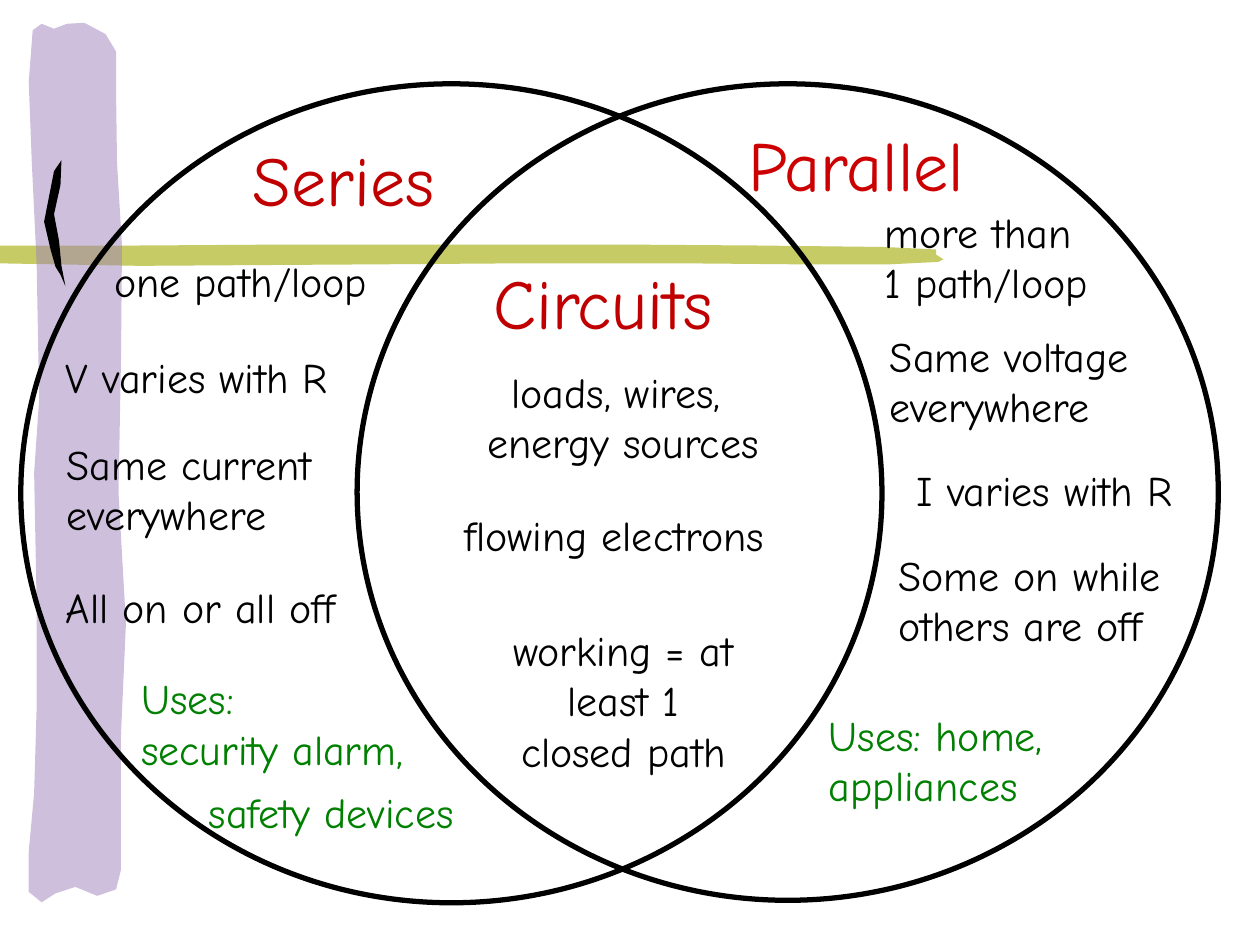
import pptx
import pptx.dml.color
import pptx.enum.shapes
import pptx.enum.text
import pptx.oxml
import pptx.util
from lxml import etree

Cm = pptx.util.Cm
FONT = "Comic Neue"
RED, BRIGHT_RED, BLACK, GREEN = "C00000", "CC0000", "000000", "008000"
TITLE, BODY = 40, 24

# Outlines: colour, opacity in percent, corner points in cm
BAND = ("C6CB65", 100, [
    (15.27, 4.95), (17.83, 4.98), (18.87, 5.03), (18.87, 5.13), (19.02, 5.23),
    (18.92, 5.28), (17.93, 5.33), (16.13, 5.33), (13.74, 5.31), (10.52, 5.31),
    (7.57, 5.33), (2.82, 5.36), (-0.05, 5.31), (-0.08, 4.95), (2.82, 4.95),
    (5.89, 4.93), (9.93, 4.93), (12.42, 4.93)])
BAR = ("9F83BD", 50, [
    (0.74, 14.25), (0.74, 12.22), (0.69, 9.53), (0.79, 8.05), (0.74, 5.33),
    (0.64, 3.23), (0.58, 1.65), (0.66, 0.61), (0.84, 0.48), (1.09, 0.58),
    (1.35, 0.48), (1.7, 0.46), (2.13, 0.69), (2.34, 1.04), (2.34, 1.8),
    (2.36, 3.28), (2.46, 4.95), (2.44, 7.26), (2.39, 9.93), (2.54, 12.57),
    (2.44, 14.81), (2.44, 17.53), (2.34, 17.93), (1.96, 18.06), (1.52, 17.88),
    (1.12, 18.01), (0.84, 18.19), (0.58, 17.98), (0.58, 17.17), (0.69, 15.98)])
CHEVRON = (BLACK, 100, [
    (1.24, 3.23), (1.22, 3.73), (1.09, 4.32), (1.19, 4.85), (1.24, 5.36),
    (1.32, 5.77), (1.22, 5.54), (1.12, 5.38), (1.02, 5.03), (0.89, 4.47),
    (0.99, 3.96), (1.09, 3.45)])

# Circles: left, top, width, height in cm
CIRCLES = [(0.42, 1.69, 17.36, 16.51), (7.2, 1.69, 17.36, 16.46)]

# Labels: text, left, top, width in cm, size, colour ("\v" is a line break)
SERIES = [
    ("Series", 4.85, 2.62, 4.85, TITLE, RED),
    ("one path/loop", 2.05, 5.03, 5.94, BODY, BLACK),
    ("V varies with R", 1.08, 6.96, 6.48, BODY, BLACK),
    ("Same current\veverywhere", 1.09, 8.71, 5.94, BODY, BLACK),
    ("All on or all off", 1.08, 11.59, 6.6, BODY, BLACK),
    ("Uses: \vsecurity alarm,", 2.6, 13.44, 6.45, BODY, GREEN),
    ("safety devices", 3.96, 15.72, 6.32, BODY, GREEN),
]
PARALLEL = [
    ("Parallel", 14.83, 2.33, 5.36, TITLE, BRIGHT_RED),
    ("more than \v1 path/loop", 17.58, 4.04, 4.98, BODY, BLACK),
    ("Same voltage\veverywhere", 17.69, 6.53, 5.74, BODY, BLACK),
    ("I varies with R", 18.23, 9.23, 6.38, BODY, BLACK),
    ("Some on while\vothers are off", 17.86, 10.95, 6.3, BODY, BLACK),
    ("Uses: home, \vappliances", 16.46, 14.17, 5.51, BODY, GREEN),
]
SHARED = [
    ("Circuits", 9.7, 5.11, 5.69, TITLE, RED),
    ("flowing electrons", 9.12, 10.15, 7.34, BODY, BLACK),
]
PARTS = ("loads, wires, \venergy sources", 9.31, 7.26, 6.5, BODY, BLACK)
WRAPPED = ("working = at least 1\vclosed path", 9.44, 12.46, 6.25, BODY, BLACK)


def color(code):
    return pptx.dml.color.RGBColor.from_string(code)


def add_outline(page, code, opacity, points):
    start, *others = [(Cm(x), Cm(y)) for x, y in points]
    builder = page.shapes.build_freeform(*start)
    builder.add_line_segments(others, close=True)
    shape = builder.convert_to_shape()
    shape.shadow.inherit = False
    shape.fill.solid()
    shape.fill.fore_color.rgb = color(code)
    shape.line.fill.background()
    if opacity < 100:
        fill = shape.fill._xPr.find(".//" + pptx.oxml.ns.qn("a:srgbClr"))
        alpha = etree.SubElement(fill, pptx.oxml.ns.qn("a:alpha"))
        alpha.set("val", str(opacity * 1000))


def add_circle(page, *place):
    circle = page.shapes.add_shape(
        pptx.enum.shapes.MSO_SHAPE.OVAL, *map(Cm, place))
    circle.shadow.inherit = False
    circle.fill.background()
    circle.line.color.rgb = color(BLACK)
    circle.line.width = pptx.util.Pt(3)


def add_label(page, text, left, top, width, size, code,
              centered=False, wrap=False):
    lines = text.count("\v") + (2 if wrap else 1)
    height = 0.25 + lines * size * 0.0427
    box = page.shapes.add_textbox(Cm(left), Cm(top), Cm(width), Cm(height))
    frame = box.text_frame
    frame.text = text
    frame.word_wrap = wrap
    frame.auto_size = pptx.enum.text.MSO_AUTO_SIZE.SHAPE_TO_FIT_TEXT
    paragraph = frame.paragraphs[0]
    if centered:
        paragraph.alignment = pptx.enum.text.PP_ALIGN.CENTER
    for span in paragraph.runs:
        span.font.name = FONT
        span.font.size = pptx.util.Pt(size)
        span.font.color.rgb = color(code)


def main():
    deck = pptx.Presentation()
    deck.slide_width, deck.slide_height = Cm(25.4), Cm(19.05)
    page = deck.slides.add_slide(deck.slide_layouts[6])
    for outline in (BAND, BAR, CHEVRON):
        add_outline(page, *outline)
    for circle in CIRCLES:
        add_circle(page, *circle)
    for label in SERIES + PARALLEL + SHARED:
        add_label(page, *label)
    add_label(page, *PARTS, centered=True)
    add_label(page, *WRAPPED, centered=True, wrap=True)
    deck.save("out.pptx")


if __name__ == "__main__":
    main()
